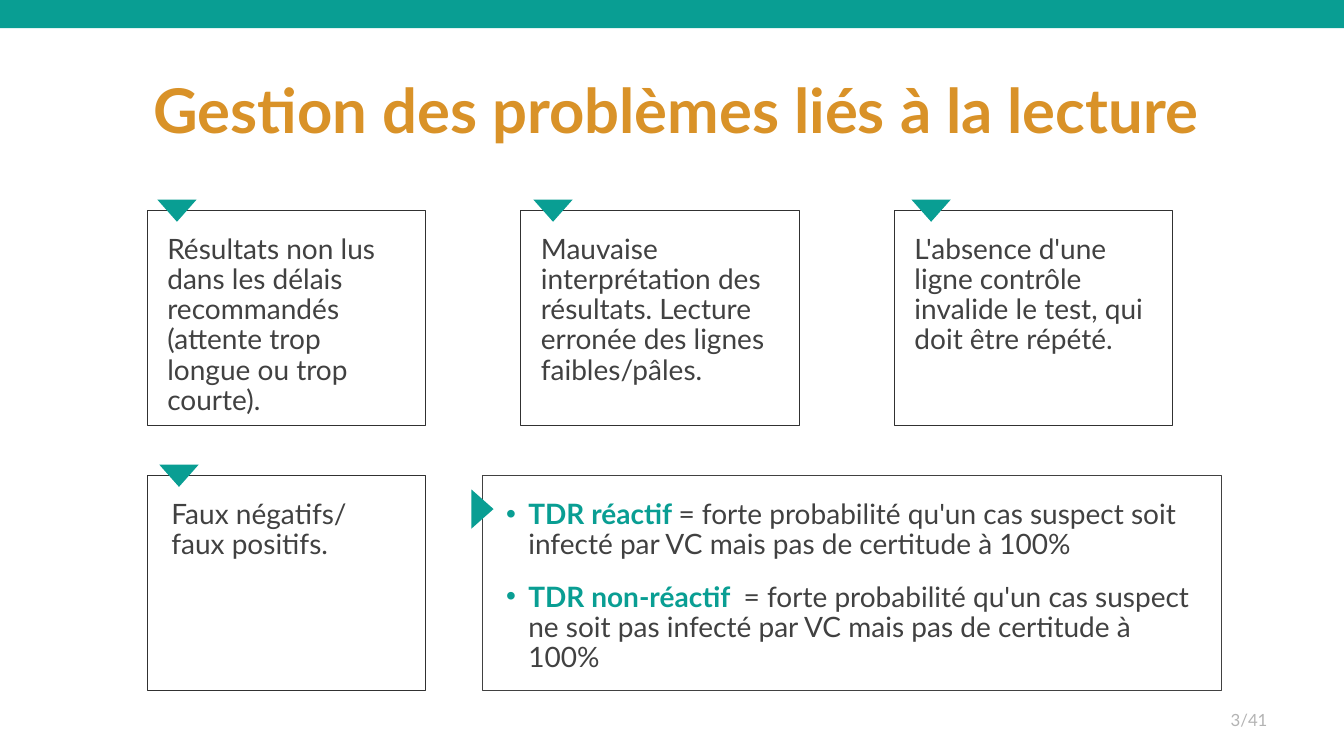
from pptx import Presentation
from pptx.dml.color import RGBColor
from pptx.enum.shapes import MSO_SHAPE
from pptx.enum.text import MSO_ANCHOR, MSO_AUTO_SIZE, PP_ALIGN
from pptx.oxml.ns import qn
from pptx.util import Inches, Pt
from lxml.etree import SubElement

TEAL, GOLD, DARK, EDGE, GREY = "099E93", "D99228", "414141", "313131", "B3B3B3"
WIDE, HIGH = 2.76, 2.13
ROWS = 2.09, 4.72


def paint(target, color):
    if hasattr(target, "solid"):
        target.solid()
        target = target.fore_color
    target.rgb = RGBColor.from_string(color)


def place(shape, left, top, width, height):
    shape.left, shape.top = Inches(left), Inches(top)
    shape.width, shape.height = Inches(width), Inches(height)


def style(para, size, color, bold=False, align=PP_ALIGN.LEFT):
    para.alignment = align
    para.line_spacing = 0.9
    font = para.font
    font.name, font.size, font.bold = "Lato", Pt(size), bold
    paint(font.color, color)


def solid(slide, kind, left, top, width, height, turn=0):
    shape = slide.shapes.add_shape(
        kind, Inches(left), Inches(top), Inches(width), Inches(height))
    shape.shadow.inherit = False
    shape.rotation = turn
    paint(shape.fill, TEAL)
    shape.line.fill.background()


def arrow(slide, left, top, turn=180):
    solid(slide, MSO_SHAPE.ISOSCELES_TRIANGLE, left, top, 0.39, 0.22, turn)


def frame(slide, left, top, width, edge, inset, right):
    box = slide.shapes.add_shape(
        MSO_SHAPE.RECTANGLE, Inches(left), Inches(top), Inches(width), Inches(HIGH))
    box.shadow.inherit = False
    box.fill.background()
    paint(box.line.color, edge)
    box.line.width = Pt(0.5)
    text = box.text_frame
    text.word_wrap = True
    text.vertical_anchor = MSO_ANCHOR.TOP
    text.margin_left, text.margin_right = Inches(inset), Inches(right)
    text.margin_top = text.margin_bottom = Inches(0.24)
    return text


def card(slide, left, top, words, tip, inset=0.2, right=0.24):
    para = frame(slide, left, top, WIDE, EDGE, inset, right).paragraphs[0]
    para.text = words
    style(para, 20, DARK)
    arrow(slide, tip, top - 0.11)


def bullet(para, term, words):
    props = para._p.get_or_add_pPr()
    props.set("marL", str(Inches(0.22)))
    props.set("indent", str(-Inches(0.22)))
    color = SubElement(props, qn("a:buClr"))
    SubElement(color, qn("a:srgbClr")).set("val", TEAL)
    SubElement(props, qn("a:buFont")).set("typeface", "Arial")
    SubElement(props, qn("a:buChar")).set("char", "•")
    style(para, 20, DARK)
    para.space_after = Pt(6)
    head = para.add_run()
    head.text = term
    head.font.bold = True
    paint(head.font.color, TEAL)
    para.add_run().text = words


def title(slide, words):
    shape = slide.shapes.title
    place(shape, 0.96, 0.4, 11.5, 1.45)
    text = shape.text_frame
    text.text = words
    text.word_wrap = True
    text.auto_size = MSO_AUTO_SIZE.NONE
    text.vertical_anchor = MSO_ANCHOR.MIDDLE
    style(text.paragraphs[0], 44, GOLD, True, PP_ALIGN.CENTER)


def folio(slide, words):
    box = slide.shapes.add_textbox(
        Inches(9.67), Inches(6.95), Inches(3), Inches(0.4))
    text = box.text_frame
    text.word_wrap = True
    text.vertical_anchor = MSO_ANCHOR.MIDDLE
    text.text = words
    style(text.paragraphs[0], 12, GREY, align=PP_ALIGN.RIGHT)


def main():
    deck = Presentation()
    deck.slide_width, deck.slide_height = Inches(13.33), Inches(7.5)
    slide = deck.slides.add_slide(deck.slide_layouts[5])
    solid(slide, MSO_SHAPE.RECTANGLE, 0, 0, 13.33, 0.28)
    title(slide, "Gestion des problèmes liés à la lecture")

    issues = [
        ("Résultats non lus dans les délais recommandés "
         "(attente trop longue ou trop courte).", 1.56),
        ("Mauvaise interprétation des résultats. Lecture erronée "
         "des lignes faibles/pâles.", 5.29),
        ("L'absence d'une ligne contrôle invalide le test, "
         "qui doit être répété.", 9.04),
    ]
    for col, (words, tip) in enumerate(issues):
        card(slide, 1.46 + 3.705 * col, ROWS[0], words, tip,
             right=0.24 if col else 0.2)
    card(slide, 1.46, ROWS[1], "Faux négatifs/\nfaux positifs.", 1.58, inset=0.24)

    text = frame(slide, 4.78, ROWS[1], 7.33, DARK, 0.24, 0.24)
    bullet(text.paragraphs[0], "TDR réactif ",
           "= forte probabilité qu'un cas suspect soit infecté par VC "
           "mais pas de certitude à 100%")
    para = text.add_paragraph()
    bullet(para, "TDR non-réactif  ",
           "= forte probabilité qu'un cas suspect ne soit pas infecté par VC "
           "mais pas de certitude à 100%")
    para.space_before = Pt(10)
    arrow(slide, 4.59, 4.94, 90)
    folio(slide, "3/41")
    deck.save("out.pptx")


if __name__ == "__main__":
    main()
